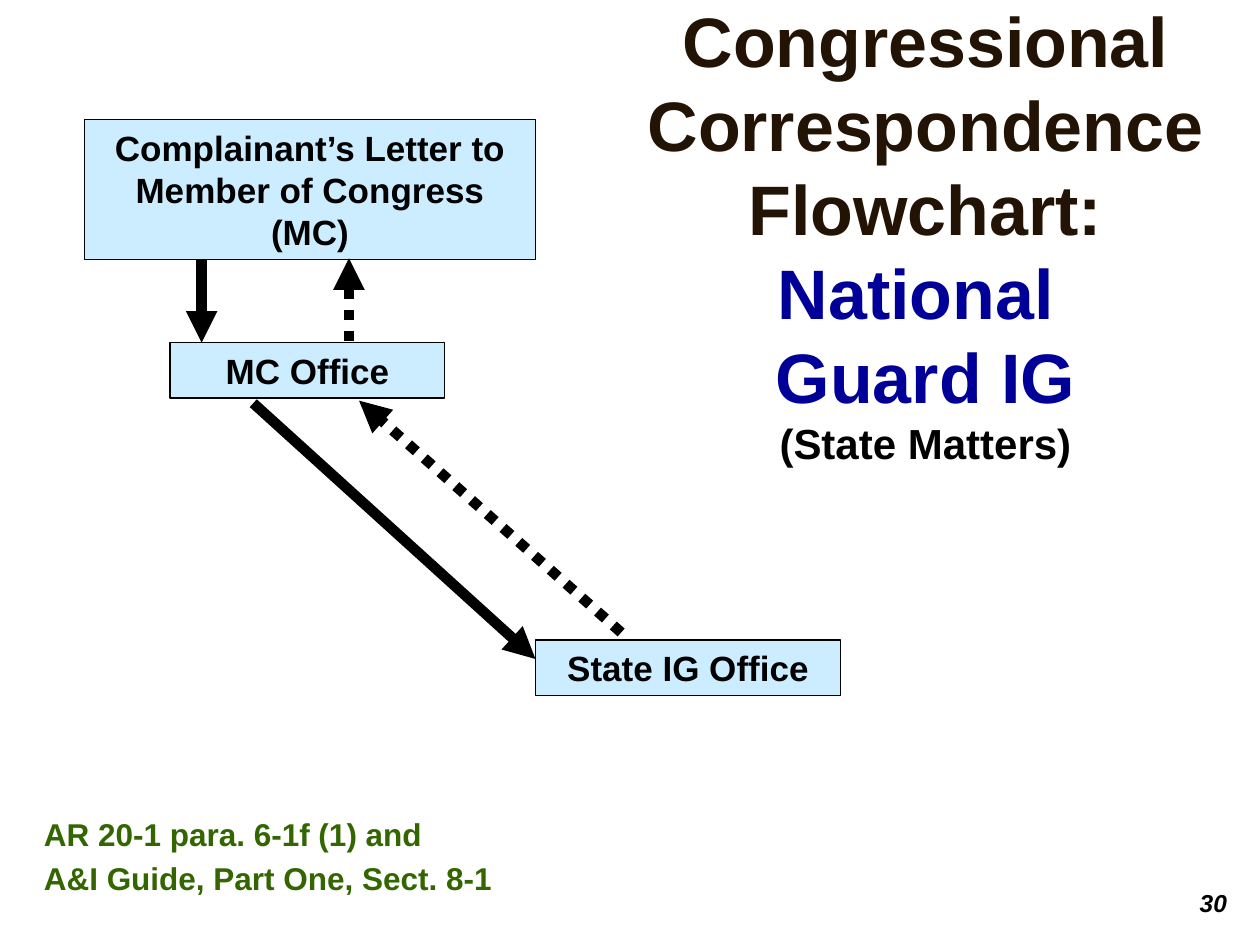
from copy import deepcopy
from dataclasses import dataclass

from pptx import Presentation
from pptx.dml.color import RGBColor
from pptx.enum import dml, shapes, text
from pptx.oxml import ns, xmlchemy
from pptx.util import Inches, Pt


@dataclass(frozen=True)
class Theme:
    font: str = "Arial"
    ink: str = "000000"
    title: str = "221304"
    accent: str = "000099"
    reference: str = "336600"
    box: str = "CCECFF"
    title_size: int = 40
    subtitle_size: int = 24
    box_size: int = 20
    reference_size: int = 18
    number_size: int = 14
    border: float = 0.75
    arrow: int = 6


THEME = Theme()


def rgb(value):
    return RGBColor.from_string(value)


def style_run(r, size, color=THEME.ink, italic=None):
    r.font.name = THEME.font
    r.font.size = Pt(size)
    r.font.bold = True
    r.font.italic = italic
    r.font.color.rgb = rgb(color)


def add_title(s, box, lines):
    sp = s.shapes.title
    sp.left, sp.top, sp.width, sp.height = map(Inches, box)
    tf = sp.text_frame
    tf.auto_size = text.MSO_AUTO_SIZE.NONE
    tf.vertical_anchor = text.MSO_ANCHOR.MIDDLE
    tf.text = "\v".join(line for line, _, _ in lines)
    p = tf.paragraphs[0]
    p.alignment = text.PP_ALIGN.CENTER
    p.line_spacing = 1.0
    for r, (_, size, color) in zip(p.runs, lines):
        style_run(r, size, color)
        following = r._r.getnext()
        if following is not None and following.tag == ns.qn("a:br"):
            following.append(deepcopy(r._r.rPr))


def add_box(s, label, box):
    sp = s.shapes.add_shape(shapes.MSO_SHAPE.RECTANGLE, *map(Inches, box))
    sp.shadow.inherit = False
    sp.fill.solid()
    sp.fill.fore_color.rgb = rgb(THEME.box)
    sp.line.color.rgb = rgb(THEME.ink)
    sp.line.width = Pt(THEME.border)
    tf = sp.text_frame
    tf.word_wrap = True
    tf.text = label
    p = tf.paragraphs[0]
    p.alignment = text.PP_ALIGN.CENTER
    style_run(p.runs[0], THEME.box_size)


def add_arrow(s, start, end, dotted=False):
    c = s.shapes.add_connector(
        shapes.MSO_CONNECTOR.STRAIGHT, *map(Inches, start + end))
    c.line.color.rgb = rgb(THEME.ink)
    c.line.width = Pt(THEME.arrow)
    if dotted:
        c.line.dash_style = dml.MSO_LINE.ROUND_DOT
    head = xmlchemy.OxmlElement("a:tailEnd")
    head.set("type", "triangle")
    c.line._get_or_add_ln().append(head)
    c._element.spPr.append(xmlchemy.OxmlElement("a:effectLst"))


def add_text(s, lines, box, size, color=THEME.ink, italic=None,
             align=text.PP_ALIGN.LEFT, wrap=True):
    tf = s.shapes.add_textbox(*map(Inches, box)).text_frame
    tf.word_wrap = wrap
    tf.text = "\n".join(lines)
    for i, p in enumerate(tf.paragraphs):
        p.alignment = align
        if i:
            p.space_before = Pt(0.2 * size)
        style_run(p.runs[0], size, color, italic)


def main():
    prs = Presentation()
    prs.slide_width, prs.slide_height = Inches(10), Inches(7.5)
    s = prs.slides.add_slide(prs.slide_layouts[5])

    add_title(s, (4.43, -0.33, 5.83, 4.36), [
        ("Congressional Correspondence Flowchart:", THEME.title_size, THEME.title),
        ("National ", THEME.title_size, THEME.accent),
        ("Guard IG", THEME.title_size, THEME.accent),
        ("(State Matters)", THEME.subtitle_size, THEME.ink),
    ])
    add_text(s, ["30"], (9.42, 7, 0.42, 0.33), THEME.number_size,
             italic=True, align=text.PP_ALIGN.CENTER, wrap=False)

    for label, box in [
        ("State IG Office", (4.25, 5.08, 2.42, 0.44)),
        ("Complainant’s Letter to Member of Congress (MC)", (0.67, 0.95, 3.58, 1.11)),
        ("MC Office", (1.35, 2.72, 2.18, 0.44)),
    ]:
        add_box(s, label, box)

    for start, end, dotted in [
        ((2.77, 2.71), (2.77, 2.05), True),
        ((1.6, 2.06), (1.6, 2.72), False),
        ((4.93, 5.02), (2.85, 3.18), True),
        ((2.01, 3.2), (4.25, 5.23), False),
    ]:
        add_arrow(s, start, end, dotted)

    add_text(s, ["AR 20-1 para. 6-1f (1) and", "A&I Guide, Part One, Sect. 8-1"],
             (0.25, 6.42, 4.5, 0.77), THEME.reference_size, THEME.reference)
    prs.save("out.pptx")


if __name__ == "__main__":
    main()
